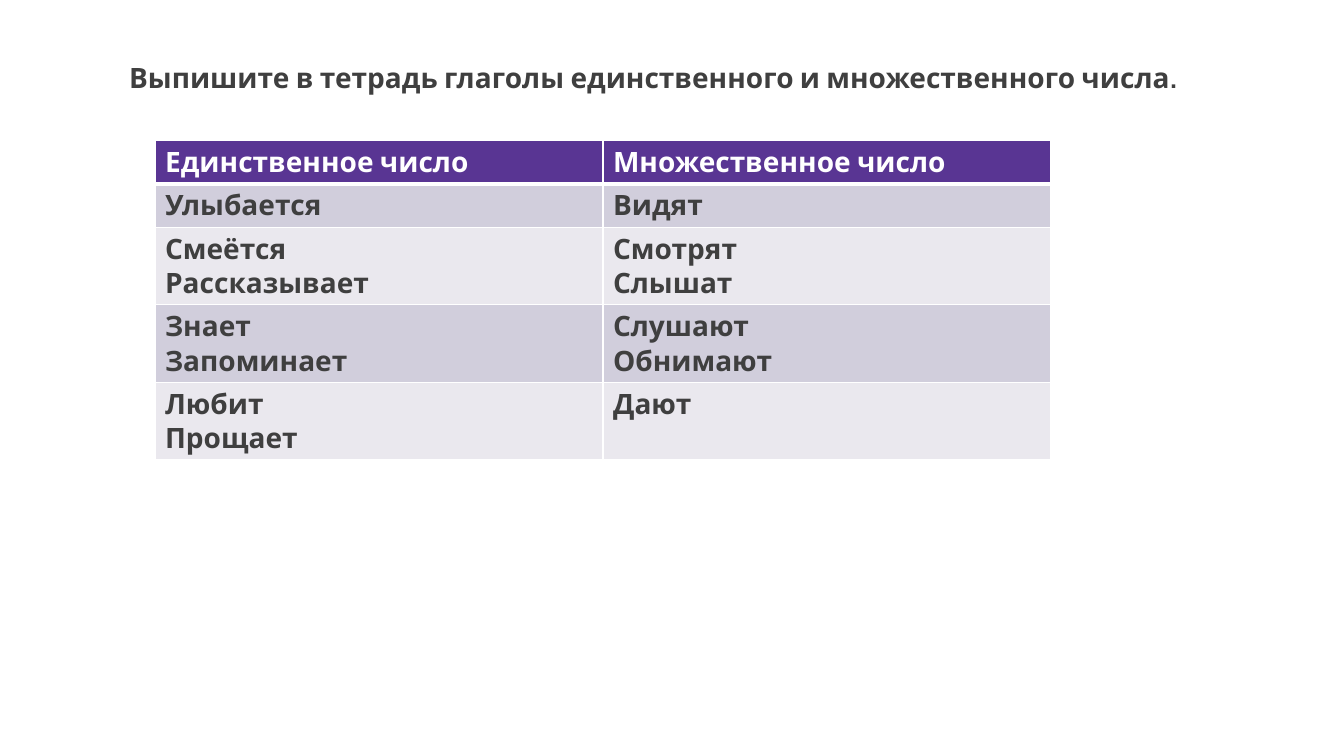
import dataclasses

import pptx
import pptx.dml.color
import pptx.enum.text
import pptx.oxml
import pptx.oxml.ns
import pptx.util


@dataclasses.dataclass(frozen=True)
class Theme:
    font: str = "Cabin"
    size: int = 20
    text: str = "3F3F3F"
    white: str = "FFFFFF"
    header: str = "593593"
    bands: tuple = ("D1CEDC", "EAE8EE")
    thin: int = 1
    thick: int = 3


TITLE = "Выпишите в тетрадь глаголы единственного и множественного числа."
VERBS = [
    ("Единственное число", "Множественное число"),
    ("Улыбается", "Видят"),
    ("Смеётся\nРассказывает", "Смотрят\nСлышат"),
    ("Знает\nЗапоминает", "Слушают\nОбнимают"),
    ("Любит\nПрощает", "Дают"),
]
PX_PER_INCH = 100.8


def px(length):
    return pptx.util.Emu(round(length * 914400 / PX_PER_INCH))


class SlideBuilder:
    def __init__(self, page, theme):
        self.page = page
        self.theme = theme

    def set_text(self, frame, text, color):
        frame.text = text
        for para in frame.paragraphs:
            para.alignment = pptx.enum.text.PP_ALIGN.LEFT
            para.line_spacing = 1.0
            para.space_before = pptx.util.Pt(0)
            para.font.name = self.theme.font
            para.font.size = pptx.util.Pt(self.theme.size)
            para.font.bold = True
            para.font.color.rgb = pptx.dml.color.RGBColor.from_string(color)

    def title(self, text, left, top, width, height):
        box = self.page.shapes.title
        box.left, box.top, box.width, box.height = map(px, (left, top, width, height))
        frame = box.text_frame
        self.set_text(frame, text, self.theme.text)
        frame.word_wrap = True
        frame.auto_size = pptx.enum.text.MSO_AUTO_SIZE.SHAPE_TO_FIT_TEXT
        frame.vertical_anchor = pptx.enum.text.MSO_ANCHOR.TOP

    def border(self, cell, side, points):
        namespace = pptx.oxml.ns.nsdecls("a")
        line = pptx.oxml.parse_xml(
            f'<a:{side} {namespace} w="{pptx.util.Pt(points)}"><a:solidFill>'
            f'<a:srgbClr val="{self.theme.white}"/></a:solidFill></a:{side}>'
        )
        cell._tc.get_or_add_tcPr().append(line)

    def cell(self, cell, text, row):
        theme = self.theme
        is_header = row == 0
        # Borders: a thick rule separates the header from the body
        self.border(cell, "lnL", theme.thin)
        self.border(cell, "lnR", theme.thin)
        self.border(cell, "lnT", theme.thick if row == 1 else theme.thin)
        self.border(cell, "lnB", theme.thick if is_header else theme.thin)
        # Fill and text
        fill = theme.header if is_header else theme.bands[(row - 1) % 2]
        cell.fill.solid()
        cell.fill.fore_color.rgb = pptx.dml.color.RGBColor.from_string(fill)
        self.set_text(cell.text_frame, text, theme.white if is_header else theme.text)

    def table(self, rows, left, top, column_width, row_height):
        columns = len(rows[0])
        table = self.page.shapes.add_table(
            len(rows), columns, px(left), px(top),
            px(column_width * columns), px(row_height * len(rows)),
        ).table
        for column in table.columns:
            column.width = px(column_width)
        for index, texts in enumerate(rows):
            table.rows[index].height = px(row_height)
            for column, text in enumerate(texts):
                self.cell(table.cell(index, column), text, index)


def main():
    deck = pptx.Presentation()
    deck.slide_width, deck.slide_height = px(1344), px(756)
    page = deck.slides.add_slide(deck.slide_layouts.get_by_name("Title Only"))
    builder = SlideBuilder(page, Theme())

    # Task
    builder.title(TITLE, 119, 55, 1092, 44)

    # Verbs by number
    builder.table(VERBS, 155, 140, 448, 41)

    deck.save("out.pptx")


if __name__ == "__main__":
    main()
